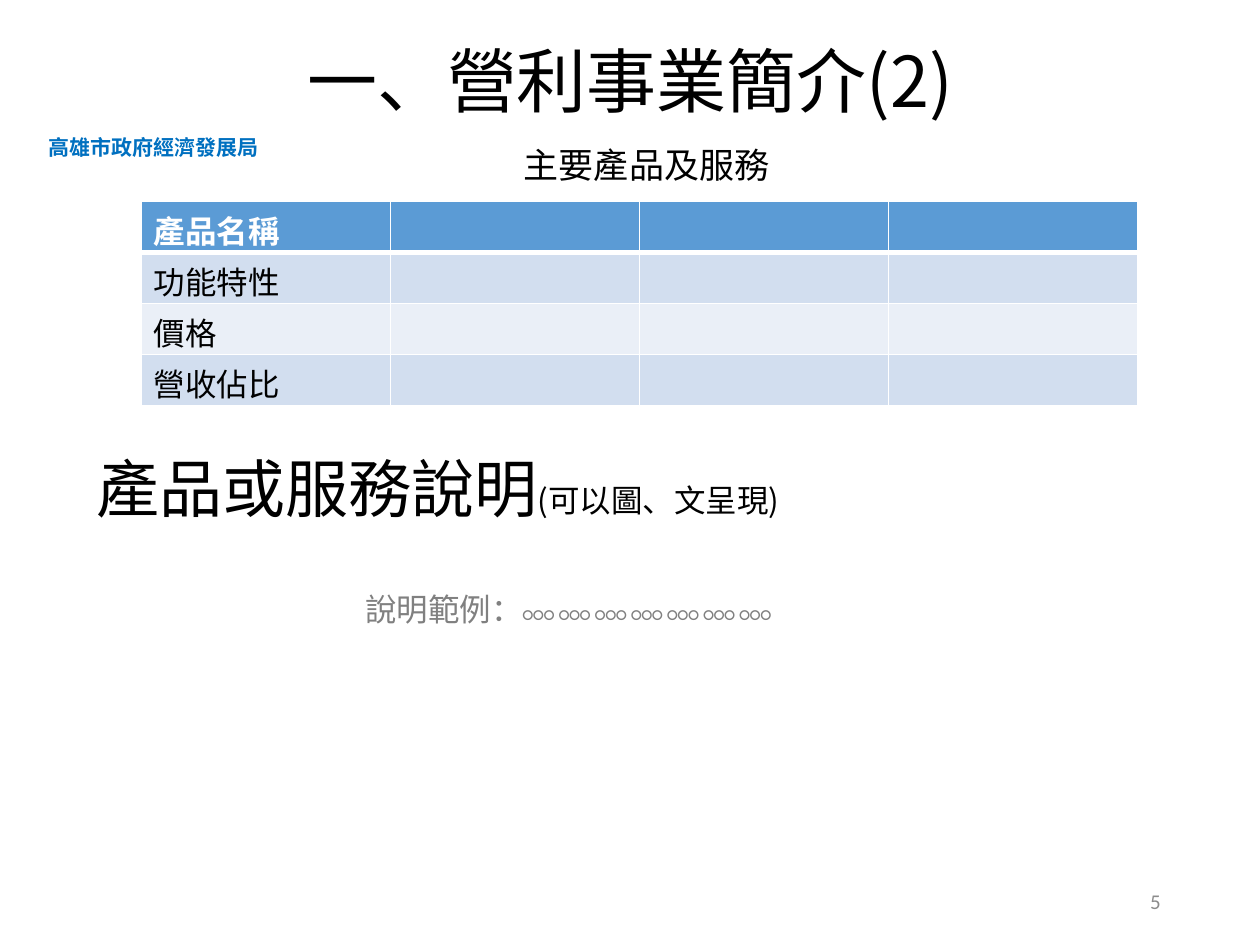
import pptx
import pptx.util
import pptx.dml.color
import pptx.enum.text
import pptx.oxml.ns
from lxml import etree

Inches = pptx.util.Inches
Pt = pptx.util.Pt
RGBColor = pptx.dml.color.RGBColor
Align = pptx.enum.text.PP_ALIGN
Anchor = pptx.enum.text.MSO_ANCHOR
qn = pptx.oxml.ns.qn

BLACK = RGBColor(0x00, 0x00, 0x00)
WHITE = RGBColor(0xFF, 0xFF, 0xFF)
AGENCY_BLUE = RGBColor(0x00, 0x70, 0xC0)
HEADER_BLUE = RGBColor(0x5B, 0x9B, 0xD5)
BAND_DARK = RGBColor(0xD2, 0xDE, 0xEF)
BAND_LIGHT = RGBColor(0xEA, 0xEF, 0xF7)
EXAMPLE_GRAY = RGBColor(0x80, 0x80, 0x80)
NUMBER_GRAY = RGBColor(0x8C, 0x8C, 0x8C)

HAN = "Noto Sans CJK SC"
LATIN = "Calibri"

PRODUCT_ROWS = ["產品名稱", "功能特性", "價格", "營收佔比"]
ROW_FILLS = [HEADER_BLUE, BAND_DARK, BAND_LIGHT, BAND_DARK]
COLUMN_COUNT = 4


def add_run(paragraph, text, size, color=BLACK, font=HAN, bold=False):
    run = paragraph.add_run()
    run.text = text
    run.font.size = Pt(size)
    run.font.bold = bold
    run.font.color.rgb = color
    run.font.name = font
    east_asian = etree.SubElement(run.font._element, qn("a:ea"))
    east_asian.set("typeface", font)


def add_line(slide, box, anchor=Anchor.MIDDLE, align=Align.LEFT, wrap=True, top_inset=0.05):
    frame = slide.shapes.add_textbox(*map(Inches, box)).text_frame
    frame.word_wrap = wrap
    frame.vertical_anchor = anchor
    frame.margin_top = Inches(top_inset)
    frame.paragraphs[0].alignment = align
    return frame.paragraphs[0]


def add_agency(slide, box):
    agency = add_line(slide, box, Anchor.TOP, wrap=False, top_inset=0.01)
    add_run(agency, "高雄市政府經濟發展局", 12, AGENCY_BLUE, bold=True)


def add_title(slide, box):
    title = add_line(slide, box, align=Align.CENTER)
    add_run(title, "一、營利事業簡介(2)", 40)


def add_caption(slide, box):
    caption = add_line(slide, box, Anchor.TOP, top_inset=0)
    add_run(caption, "主要產品及服務", 20)


def set_borders(cell, widths):
    properties = cell._tc.get_or_add_tcPr()
    for side, width in widths.items():
        border = etree.SubElement(properties, qn("a:ln" + side), w=str(Pt(width)))
        fill = etree.SubElement(border, qn("a:solidFill"))
        etree.SubElement(fill, qn("a:srgbClr"), val=str(WHITE))


def add_products(slide, box):
    table = slide.shapes.add_table(len(PRODUCT_ROWS), COLUMN_COUNT, *map(Inches, box)).table
    table.horz_banding = False
    for row, (label, fill) in enumerate(zip(PRODUCT_ROWS, ROW_FILLS)):
        header = row == 0
        for column in range(COLUMN_COUNT):
            cell = table.cell(row, column)
            cell.margin_top = Inches(0.04)
            cell.margin_bottom = 0
            top = 3 if row == 1 else 1
            set_borders(cell, {"L": 1, "R": 1, "T": top, "B": 3 if header else 1})
            cell.fill.solid()
            cell.fill.fore_color.rgb = fill
        add_run(table.cell(row, 0).text_frame.paragraphs[0], label, 18,
                WHITE if header else BLACK, bold=header)


def add_description_heading(slide, box):
    heading = add_line(slide, box)
    add_run(heading, "產品或服務說明", 36)
    add_run(heading, "(可以圖、文呈現)", 18)


def add_example(slide, box):
    example = add_line(slide, box, Anchor.TOP, wrap=False)
    add_run(example, "說明範例：", 18, EXAMPLE_GRAY, LATIN)
    add_run(example, " ".join(["○○○"] * 7), 11, EXAMPLE_GRAY, LATIN)


def add_page_number(slide, box):
    number = add_line(slide, box, align=Align.RIGHT)
    add_run(number, "5", 12, NUMBER_GRAY, LATIN)


def main():
    presentation = pptx.Presentation()
    presentation.slide_width = Inches(10)
    presentation.slide_height = Inches(7.5)
    slide = presentation.slides.add_slide(presentation.slide_layouts[6])
    add_agency(slide, (0.29, 1.06, 1.88, 0.3))
    add_title(slide, (0.5, 0.13, 9, 1.01))
    add_caption(slide, (4.06, 1.14, 5, 0.44))
    add_products(slide, (1.12, 1.6, 7.91, 1.62))
    add_description_heading(slide, (0.67, 3.51, 9, 0.71))
    add_example(slide, (2.8, 4.63, 5.1, 0.4))
    add_page_number(slide, (7.06, 6.95, 2.25, 0.4))
    presentation.save("out.pptx")


if __name__ == "__main__":
    main()
